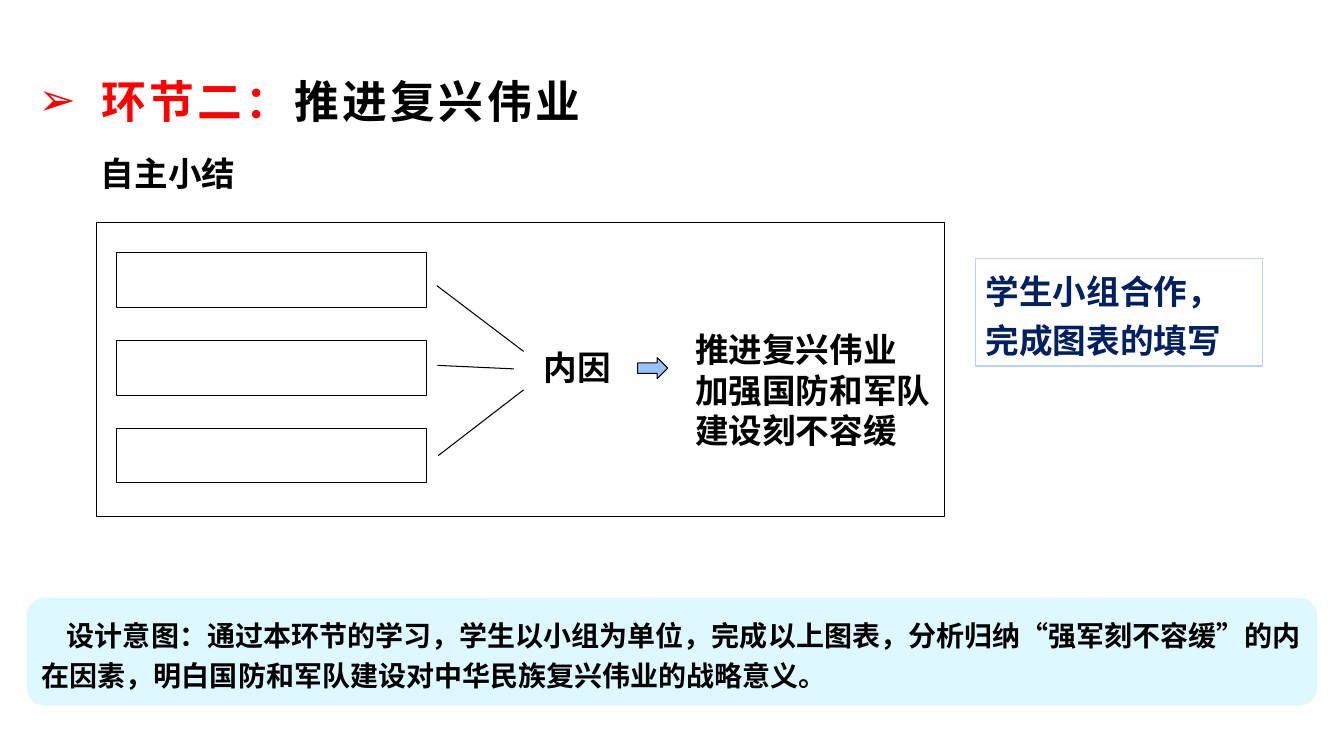
from lxml import etree
from pptx import Presentation
from pptx.dml.color import RGBColor
from pptx.enum import shapes, text
from pptx.oxml.ns import qn
from pptx.util import Pt

BLACK = RGBColor(0x00, 0x00, 0x00)
RED = RGBColor(0xFF, 0x00, 0x00)
NAVY = RGBColor(0x00, 0x20, 0x60)
ARROW_BLUE = RGBColor(0x99, 0xC2, 0xFD)
BORDER_BLUE = RGBColor(0xB9, 0xD2, 0xFD)
PALE_CYAN = RGBColor(0xDE, 0xF8, 0xFF)
CJK = "Noto Sans CJK SC"
SHAPE = shapes.MSO_SHAPE


def add_run(p, words, size=24, color=BLACK, font=CJK, spacing=None):
    r = p.add_run()
    r.text = words
    r.font.size, r.font.bold, r.font.name = Pt(size), True, font
    r.font.color.rgb = color
    rPr = r._r.get_or_add_rPr()
    etree.SubElement(rPr, qn("a:ea")).set("typeface", font)
    if spacing:
        rPr.set("spc", str(int(spacing * 100)))


def write(sp, *lines, anchor=text.MSO_ANCHOR.TOP, line_spacing=None, indent=0, **fmt):
    tf = sp.text_frame
    tf.word_wrap = True
    tf.vertical_anchor = anchor
    for i, line in enumerate(lines):
        p = tf.add_paragraph() if i else tf.paragraphs[0]
        p.alignment = text.PP_ALIGN.LEFT
        if line_spacing:
            p.line_spacing = line_spacing
        if indent:
            p._p.get_or_add_pPr().set("indent", str(Pt(indent)))
        add_run(p, line, **fmt)


def add_box(slide, kind, left, top, width, height, fill=None, line=None):
    sp = slide.shapes.add_shape(kind, Pt(left), Pt(top), Pt(width), Pt(height))
    sp.shadow.inherit = False
    if fill is None:
        sp.fill.background()
    else:
        sp.fill.solid()
        sp.fill.fore_color.rgb = fill
    if line is None:
        sp.line.fill.background()
    else:
        sp.line.color.rgb = line
        sp.line.width = Pt(0.75)
    return sp


def add_text(slide, left, top, width, height):
    return slide.shapes.add_textbox(Pt(left), Pt(top), Pt(width), Pt(height))


def add_line(slide, x1, y1, x2, y2):
    cn = slide.shapes.add_connector(shapes.MSO_CONNECTOR.STRAIGHT, Pt(x1), Pt(y1), Pt(x2), Pt(y2))
    cn.line.color.rgb = BLACK
    cn.line.width = Pt(0.75)
    etree.SubElement(cn._element.spPr, qn("a:effectLst"))


def heading(slide, left, top, width):
    # Bulleted title in two colours
    sp = add_text(slide, left, top, width, 48)
    tf = sp.text_frame
    tf.word_wrap = True
    tf.margin_left = tf.margin_right = Pt(5)
    tf.margin_top = tf.margin_bottom = Pt(2)
    p = tf.paragraphs[0]
    pPr = p._p.get_or_add_pPr()
    pPr.set("marL", str(Pt(45)))
    pPr.set("indent", str(Pt(-45)))
    etree.SubElement(pPr, qn("a:buFont")).set("typeface", "Arial")
    etree.SubElement(pPr, qn("a:buChar")).set("char", "➢")
    add_run(p, "环节二：", size=32, color=RED, spacing=2.4)
    add_run(p, "推进复兴伟业", size=32, spacing=2.4)
    # Subtitle
    write(add_text(slide, left + 42.5, top + 55, 204, 36), "自主小结", font="Arial")


def diagram(slide, left, top, width, height):
    add_box(slide, SHAPE.RECTANGLE, left, top, width, height, line=BLACK)
    # Blank boxes to fill in
    for row in range(3):
        add_box(slide, SHAPE.RECTANGLE, left + 14.5, top + 21.5 + row * 62.75, 221, 39, line=BLACK)
    # Lines that meet at the cause
    for x1, y1, x2, y2 in ((243, 45, 305, 92), (243.5, 102, 298, 104.5), (244, 166.5, 305, 119.5)):
        add_line(slide, left + x1, top + y1, left + x2, top + y2)
    write(add_text(slide, left + 312.5, top + 85.5, 66, 37.5), "内因")
    # Arrow to the conclusion
    add_box(slide, SHAPE.RIGHT_ARROW, left + 386.5, top + 96.5, 21.5, 15, fill=ARROW_BLUE, line=BLACK)
    write(add_text(slide, left + 420.5, top + 72.5, 186, 65), "推进复兴伟业", "加强国防和军队建设刻不容缓")


def task_note(slide, left, top, width, height):
    sp = add_box(slide, SHAPE.RECTANGLE, left, top, width, height, line=BORDER_BLUE)
    write(sp, "学生小组合作，完成图表的填写", color=NAVY, line_spacing=1.2)


def design_intent(slide, left, top, width, height):
    sp = add_box(slide, SHAPE.ROUNDED_RECTANGLE, left, top, width, height, fill=PALE_CYAN)
    write(sp, "设计意图：通过本环节的学习，学生以小组为单位，完成以上图表，分析归纳“强军刻不容缓”的内在因素，"
          "明白国防和军队建设对中华民族复兴伟业的战略意义。",
          size=20, line_spacing=1.2, indent=18, anchor=text.MSO_ANCHOR.MIDDLE)


def main():
    prs = Presentation()
    prs.slide_width, prs.slide_height = Pt(960), Pt(540)
    slide = prs.slides.add_slide(prs.slide_layouts[6])
    design_intent(slide, 19, 427, 922, 77)
    diagram(slide, 69, 159, 606, 210)
    task_note(slide, 697, 184.5, 205, 77)
    heading(slide, 22.5, 50.5, 864)
    prs.save("out.pptx")


if __name__ == "__main__":
    main()
